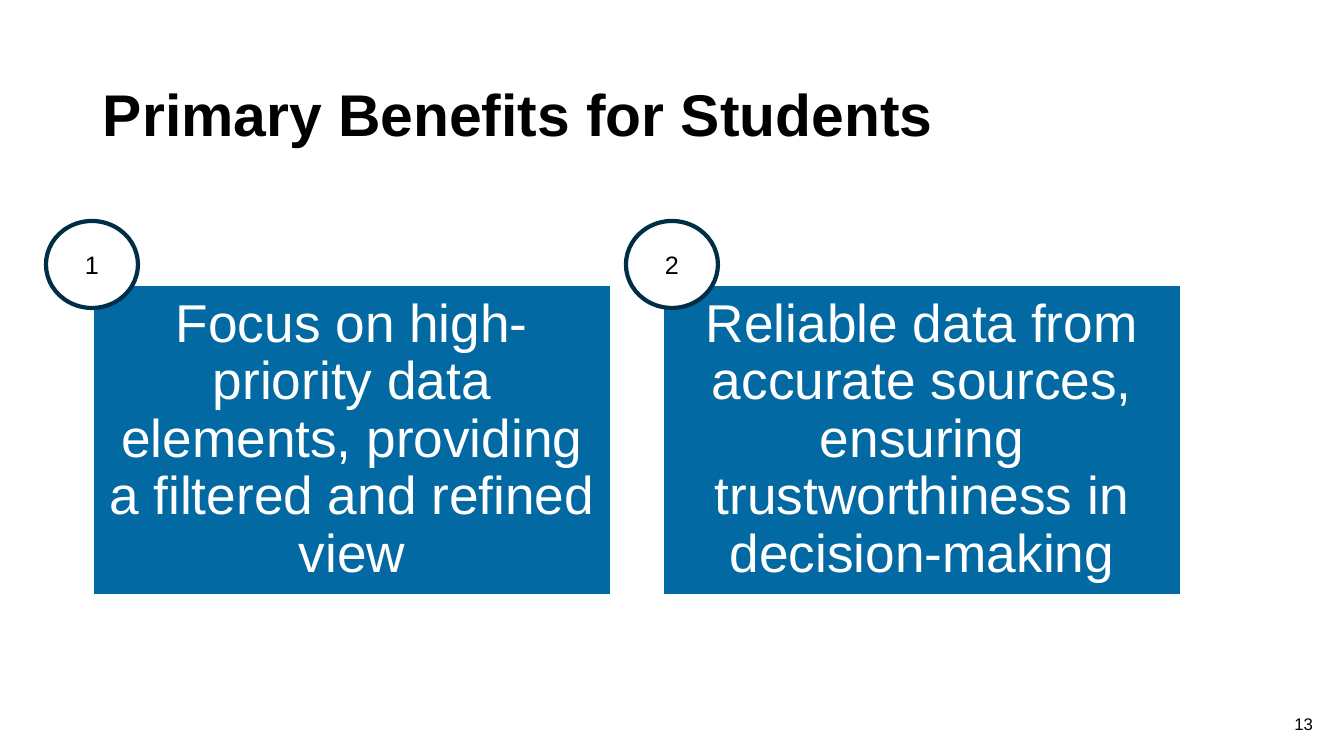
"""Build the slide on the primary benefits for students."""
import pptx
import pptx.util
import pptx.dml.color
import pptx.enum.shapes
import pptx.enum.text

RGB = pptx.dml.color.RGBColor
SHAPE = pptx.enum.shapes.MSO_SHAPE
ALIGN = pptx.enum.text.PP_ALIGN
ANCHOR = pptx.enum.text.MSO_ANCHOR

TITLE = "Primary Benefits for Students"
CARDS = [
    "Focus on high-priority data elements, providing a filtered and refined view",
    "Reliable data from accurate sources, ensuring trustworthiness in decision-making",
]
PAGE = "13"

BLACK = RGB(0x00, 0x00, 0x00)
WHITE = RGB(0xFF, 0xFF, 0xFF)
BLUE = RGB(0x03, 0x69, 0xA2)
NAVY = RGB(0x01, 0x2E, 0x47)

SCALE = 914400 / 100.8
CARD, CARD_STEP = (93, 285, 518, 310), 570
BADGE, BADGE_STEP = (46, 221, 92, 87), 580


def px(size):
    """Turn px into EMU."""
    return round(size * SCALE)


def shift(box, step):
    """Move a box to the right."""
    left, top, width, height = box
    return left + step, top, width, height


def write(item, text, size, color=BLACK, bold=False, align=ALIGN.CENTER,
          pad=(10, 5, 10, 5), space=1.0):
    """Put formatted text into a shape or text box."""
    frame = item.text_frame
    frame.word_wrap = True
    frame.vertical_anchor = ANCHOR.MIDDLE
    frame.margin_left, frame.margin_top, frame.margin_right, frame.margin_bottom = map(px, pad)
    para = frame.paragraphs[0]
    para.alignment = align
    para.line_spacing = space
    run = para.add_run()
    run.text = text
    run.font.name = "Arial"
    run.font.size = pptx.util.Pt(size)
    run.font.bold = bold
    run.font.color.rgb = color


def draw(slide, kind, box, fill, line, width):
    """Add a filled and outlined shape."""
    item = slide.shapes.add_shape(kind, *map(px, box))
    item.shadow.inherit = False
    item.fill.solid()
    item.fill.fore_color.rgb = fill
    item.line.color.rgb = line
    item.line.width = pptx.util.Pt(width)
    return item


def main():
    """Lay out the slide and save it."""
    deck = pptx.Presentation()
    deck.slide_width, deck.slide_height = px(1344), px(756)
    slide = deck.slides.add_slide(deck.slide_layouts[6])

    title = slide.shapes.add_textbox(*map(px, (93, 40, 1089, 146)))
    write(title, TITLE, 42, bold=True, align=ALIGN.LEFT)

    for index, text in enumerate(CARDS):
        card = draw(slide, SHAPE.RECTANGLE, shift(CARD, index * CARD_STEP), BLUE, WHITE, 1)
        write(card, text, 38, color=WHITE, pad=(16, 16, 16, 16), space=0.9)
        badge = draw(slide, SHAPE.OVAL, shift(BADGE, index * BADGE_STEP), WHITE, NAVY, 3)
        write(badge, str(index + 1), 18)

    page = slide.shapes.add_textbox(*map(px, (1041, 716, 302, 40)))
    write(page, PAGE, 12, align=ALIGN.RIGHT, pad=(10, 5, 30, 30))

    deck.save("out.pptx")


if __name__ == "__main__":
    main()
